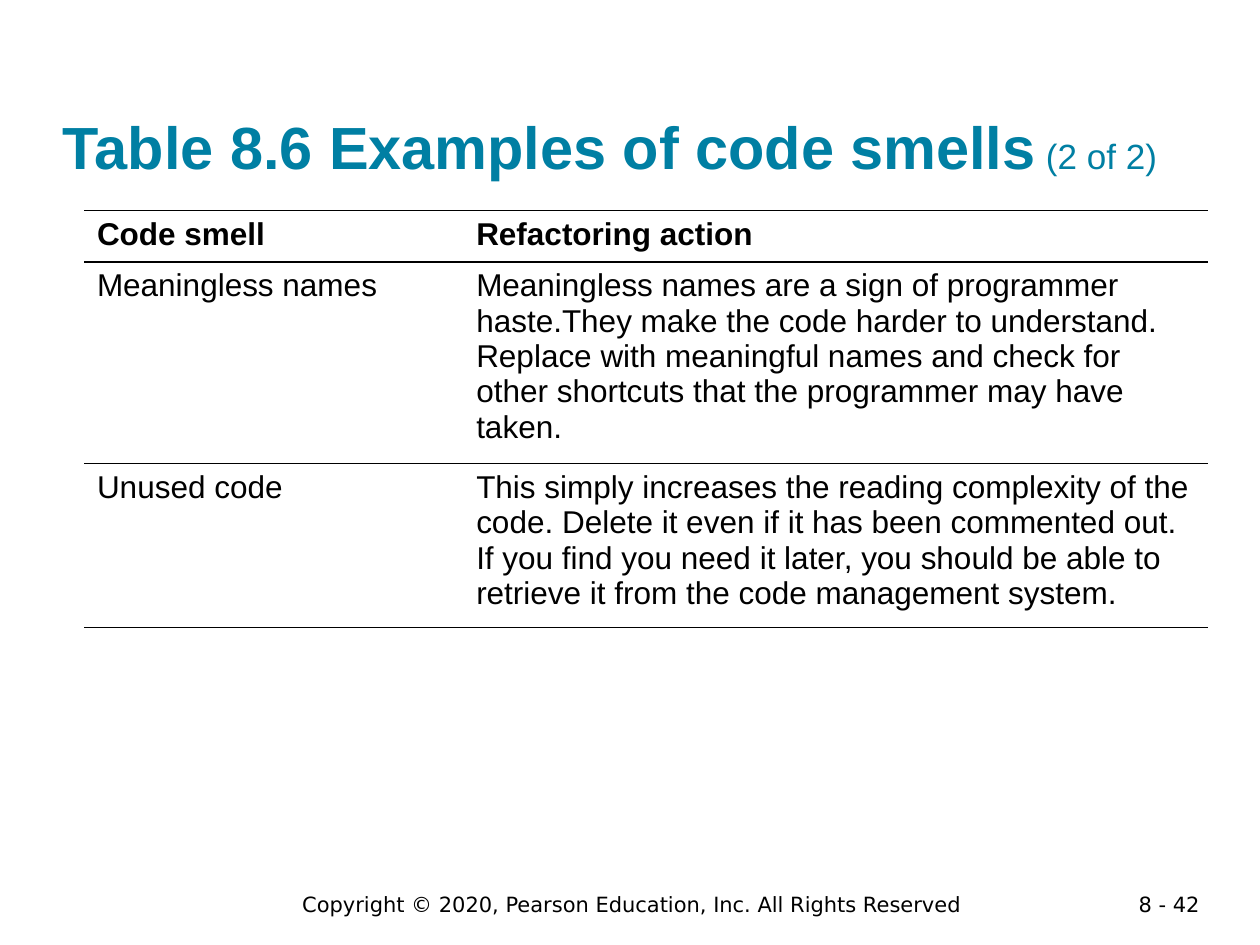
import dataclasses
import typing

import pptx
import pptx.dml.color
import pptx.enum.text
import pptx.oxml
import pptx.oxml.ns
import pptx.util

Inches = pptx.util.Inches
ALIGN = pptx.enum.text.PP_ALIGN
ANCHOR = pptx.enum.text.MSO_ANCHOR
BLACK = "000000"
TEAL = "007FA3"


@dataclasses.dataclass
class Run:
    text: str
    size: float
    font: str = "Arial"
    color: str = BLACK
    bold: bool = False


@dataclasses.dataclass
class Label:
    left: float
    top: float
    width: float
    height: float
    runs: list[Run]
    align: ALIGN = ALIGN.LEFT
    anchor: ANCHOR = ANCHOR.TOP
    inset: tuple[float, float] = (0.1, 0.05)


ROWS = [
    ("Code smell", "Refactoring action"),
    ("Meaningless names",
     "Meaningless names are a sign of programmer haste.They make the code "
     "harder to understand. Replace with meaningful names and check for other "
     "shortcuts that the programmer may have taken."),
    ("Unused code",
     "This simply increases the reading complexity of the code. Delete it even "
     "if it has been commented out. If you find you need it later, you should "
     "be able to retrieve it from the code management system."),
]
WIDTHS = [3.01, 5.91]
HEIGHTS = [0.41, 1.5, 1.22]

LABELS = [
    Label(8.62, 7.03, 1, 0.22, [Run("8 - 42", 12, "DejaVu Sans")], ALIGN.RIGHT),
    Label(1.64, 7.03, 6.75, 0.3,
          [Run("Copyright © 2020, Pearson Education, Inc. All Rights Reserved",
               12, "DejaVu Sans")], ALIGN.CENTER),
    Label(0.5, 0.24, 9, 1.2,
          [Run("Table 8.6 Examples of code smells", 34, color=TEAL, bold=True),
           Run(" ", 20, color=TEAL, bold=True),
           Run("(2 of 2)", 20, color=TEAL)],
          anchor=ANCHOR.BOTTOM, inset=(0, 0)),
]


def paint(target: typing.Any, color: str) -> None:
    """Give a colour format an RGB value from a hex string."""
    target.rgb = pptx.dml.color.RGBColor.from_string(color)


def add_run(para: typing.Any, run: Run) -> None:
    part = para.add_run()
    part.text = run.text
    part.font.size = pptx.util.Pt(run.size)
    part.font.name = run.font
    part.font.bold = run.bold
    paint(part.font.color, run.color)


def add_label(slide: typing.Any, label: Label) -> None:
    box = slide.shapes.add_textbox(Inches(label.left), Inches(label.top),
                                   Inches(label.width), Inches(label.height))
    frame = box.text_frame
    frame.word_wrap = True
    frame.vertical_anchor = label.anchor
    frame.margin_left = frame.margin_right = Inches(label.inset[0])
    frame.margin_top = frame.margin_bottom = Inches(label.inset[1])
    para = frame.paragraphs[0]
    para.alignment = label.align
    for run in label.runs:
        add_run(para, run)


def rule_cell(cell: typing.Any) -> None:
    """Draw black lines above and below a clear cell, none at its sides."""
    cell.fill.background()
    props = cell._tc.get_or_add_tcPr()
    solid = f'<a:solidFill><a:srgbClr val="{BLACK}"/></a:solidFill>'
    space = pptx.oxml.ns.nsdecls("a")
    for spot, side in enumerate("LRTB"):
        fill = solid if side in "TB" else "<a:noFill/>"
        line = f'<a:ln{side} {space} w="{pptx.util.Pt(1)}">{fill}</a:ln{side}>'
        props.insert(spot, pptx.oxml.parse_xml(line))


def add_smells(slide: typing.Any) -> None:
    frame = slide.shapes.add_table(
        len(ROWS), len(WIDTHS), Inches(0.67), Inches(1.67),
        Inches(sum(WIDTHS)), Inches(sum(HEIGHTS)))
    table = frame.table
    table.horz_banding = False
    for col, width in zip(table.columns, WIDTHS):
        col.width = Inches(width)
    for y, (row, height) in enumerate(zip(table.rows, HEIGHTS)):
        row.height = Inches(height)
        for cell, text in zip(row.cells, ROWS[y]):
            rule_cell(cell)
            add_run(cell.text_frame.paragraphs[0], Run(text, 18, bold=y == 0))


def main() -> None:
    deck = pptx.Presentation()
    deck.slide_width, deck.slide_height = Inches(10), Inches(7.5)
    slide = deck.slides.add_slide(deck.slide_layouts[6])
    for label in LABELS:
        add_label(slide, label)
    add_smells(slide)
    deck.save("out.pptx")


if __name__ == "__main__":
    main()
